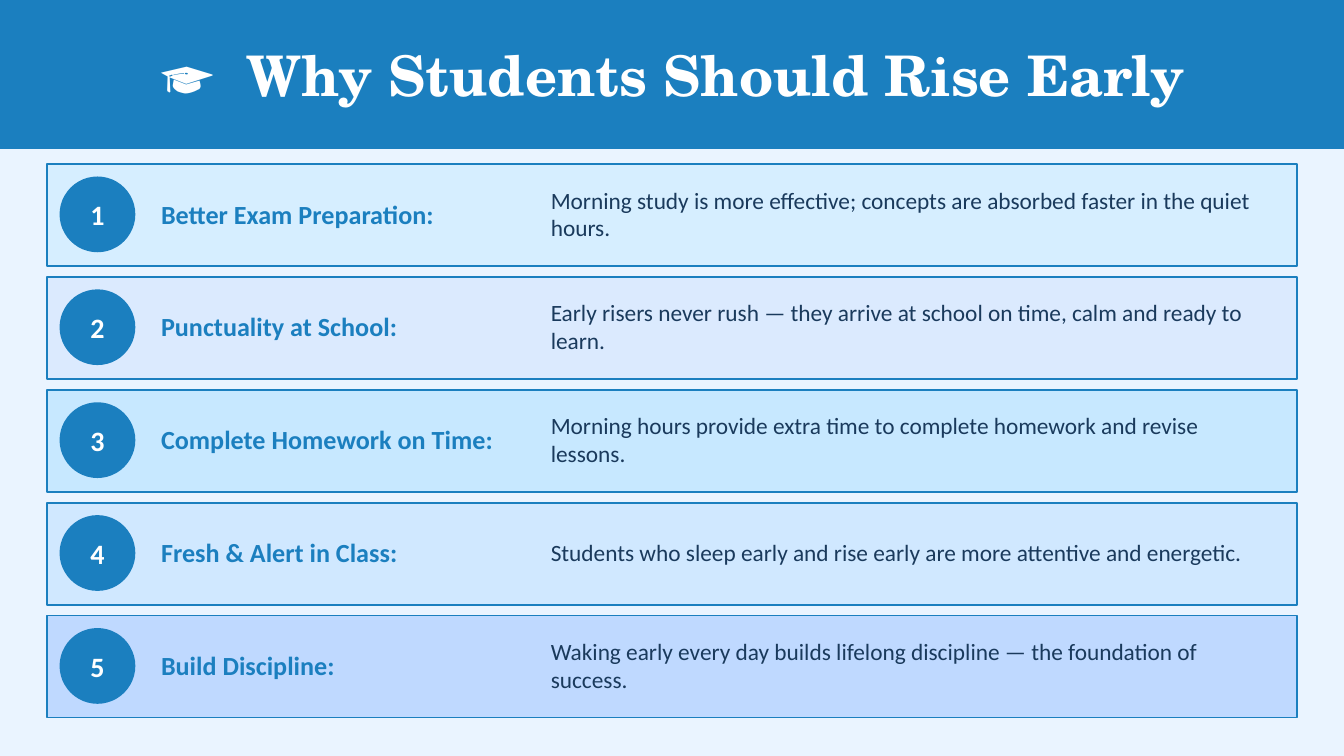
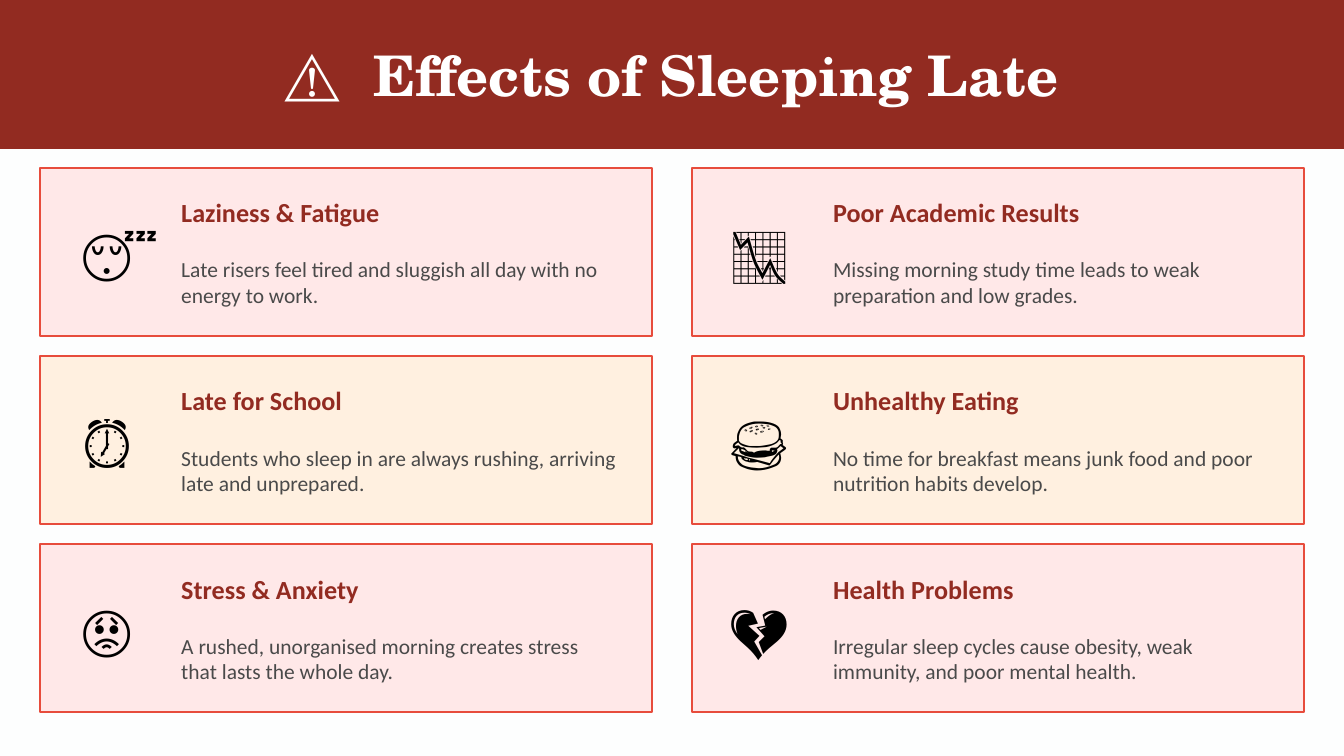
from dataclasses import dataclass

from pptx import Presentation
from pptx.dml.color import RGBColor
from pptx.enum.shapes import MSO_SHAPE as Preset
from pptx.enum.text import MSO_ANCHOR as Anchor, MSO_AUTO_SIZE as AutoSize, PP_ALIGN as Align
from pptx.shapes.autoshape import Shape
from pptx.presentation import Presentation as Deck
from pptx.slide import Slide
from pptx.util import Inches, Pt

TITLE_ONLY = 5
WHITE = "FFFFFF"
BLUE = "1B7FBF"
NAVY = "1A3A5C"
DARK_RED = "922B21"
RED = "E74C3C"
GREY = "4A4A4A"
BLACK = "000000"
PINK = "FFE8E8"
CREAM = "FFF0E0"


@dataclass(frozen=True)
class Style:
    size: float
    color: str
    bold: bool = False
    align: Align = Align.LEFT
    font: str = "Calibri"


@dataclass(frozen=True)
class Box:
    left: float
    top: float
    width: float
    height: float

    def inside(self, left: float, top: float, width: float, height: float) -> "Box":
        """A box placed relative to this one's top left corner."""
        return Box(self.left + left, self.top + top, width, height)

    def lengths(self) -> list[Inches]:
        return [Inches(v) for v in (self.left, self.top, self.width, self.height)]


@dataclass(frozen=True)
class Reason:
    heading: str
    detail: str
    fill: str


@dataclass(frozen=True)
class Effect:
    icon: str
    heading: str
    detail: str


TITLE = Style(30, WHITE, True, Align.CENTER, "TeX Gyre Schola")
NUMBER = Style(15, WHITE, True, Align.CENTER)
REASON_HEADING = Style(14, BLUE, True)
REASON_DETAIL = Style(12.5, NAVY)
ICON = Style(30, BLACK, align=Align.CENTER)
EFFECT_HEADING = Style(14, DARK_RED, True)
EFFECT_DETAIL = Style(11.5, GREY)

REASONS = [
    Reason("Better Exam Preparation:",
           "Morning study is more effective; concepts are absorbed faster in the quiet hours.",
           "D6EEFF"),
    Reason("Punctuality at School:",
           "Early risers never rush — they arrive at school on time, calm and ready to learn.",
           "DBEAFE"),
    Reason("Complete Homework on Time:",
           "Morning hours provide extra time to complete homework and revise lessons.",
           "C7E8FF"),
    Reason("Fresh & Alert in Class:",
           "Students who sleep early and rise early are more attentive and energetic.",
           "D0E8FF"),
    Reason("Build Discipline:",
           "Waking early every day builds lifelong discipline — the foundation of success.",
           "BFD9FF"),
]

EFFECTS = [
    Effect("😴", "Laziness & Fatigue",
           "Late risers feel tired and sluggish all day with no energy to work."),
    Effect("📉", "Poor Academic Results",
           "Missing morning study time leads to weak preparation and low grades."),
    Effect("⏰", "Late for School",
           "Students who sleep in are always rushing, arriving late and unprepared."),
    Effect("🍔", "Unhealthy Eating",
           "No time for breakfast means junk food and poor nutrition habits develop."),
    Effect("😟", "Stress & Anxiety",
           "A rushed, unorganised morning creates stress that lasts the whole day."),
    Effect("💔", "Health Problems",
           "Irregular sleep cycles cause obesity, weak immunity, and poor mental health."),
]


def rgb(color: str) -> RGBColor:
    return RGBColor.from_string(color)


def write(shape: Shape, text: str, style: Style) -> None:
    """Fill a shape with one formatted, vertically centred paragraph."""
    frame = shape.text_frame
    frame_format = {"word_wrap": True, "auto_size": AutoSize.NONE,
                    "vertical_anchor": Anchor.MIDDLE}
    for name, value in frame_format.items():
        setattr(frame, name, value)
    para = frame.paragraphs[0]
    para.alignment = style.align
    span = para.add_run()
    span.text = text
    span_format = {"name": style.font, "size": Pt(style.size), "bold": style.bold}
    for name, value in span_format.items():
        setattr(span.font, name, value)
    span.font.color.rgb = rgb(style.color)


def add_text(page: Slide, box: Box, text: str, style: Style) -> None:
    write(page.shapes.add_textbox(*box.lengths()), text, style)


def add_panel(page: Slide, box: Box, fill: str, line: str,
              preset: Preset = Preset.RECTANGLE) -> Shape:
    panel = page.shapes.add_shape(preset, *box.lengths())
    panel.shadow.inherit = False
    panel.fill.solid()
    panel.fill.fore_color.rgb = rgb(fill)
    panel.line.color.rgb = rgb(line)
    panel.line.width = Pt(1)
    return panel


def add_page(deck: Deck, title: str, background: str, band_color: str) -> Slide:
    """Add a slide with a coloured title band."""
    page = deck.slides.add_slide(deck.slide_layouts[TITLE_ONLY])
    page.background.fill.solid()
    page.background.fill.fore_color.rgb = rgb(background)
    heading = page.shapes.title
    title_box = Box(0.3, 0.1, 9.4, 0.9)
    for name, value in zip(("left", "top", "width", "height"), title_box.lengths()):
        setattr(heading, name, value)
    write(heading, title, TITLE)
    band = add_panel(page, Box(0, 0, 10, 1.1), band_color, band_color)
    heading.element.addprevious(band.element)  # keep the band behind the title
    return page


def add_reason(page: Slide, index: int, reason: Reason) -> None:
    row = Box(0.35, 1.22 + 0.84 * index, 9.3, 0.76)
    add_panel(page, row, reason.fill, BLUE)
    badge = add_panel(page, row.inside(0.1, 0.1, 0.55, 0.55), BLUE, BLUE, Preset.OVAL)
    write(badge, str(index + 1), NUMBER)
    add_text(page, row.inside(0.75, 0.12, 2.9, 0.5), reason.heading, REASON_HEADING)
    add_text(page, row.inside(3.65, 0.12, 5.5, 0.5), reason.detail, REASON_DETAIL)


def add_effect(page: Slide, index: int, effect: Effect) -> None:
    row, column = divmod(index, 2)
    card = Box(0.3 + 4.85 * column, 1.25 + 1.4 * row, 4.55, 1.25)
    add_panel(page, card, CREAM if row % 2 else PINK, RED)
    add_text(page, card.inside(0.1, 0.1, 0.8, 1.05), effect.icon, ICON)
    add_text(page, card.inside(0.95, 0.12, 3.45, 0.42), effect.heading, EFFECT_HEADING)
    add_text(page, card.inside(0.95, 0.55, 3.45, 0.6), effect.detail, EFFECT_DETAIL)


def main() -> None:
    deck = Presentation()
    deck.slide_width = Inches(10)
    deck.slide_height = Inches(10 * 9 / 16)

    reasons_page = add_page(deck, "🎓  Why Students Should Rise Early", "EAF4FF", BLUE)
    for index, reason in enumerate(REASONS):
        add_reason(reasons_page, index, reason)

    effects_page = add_page(deck, "⚠️  Effects of Sleeping Late", "FDFEFE", DARK_RED)
    for index, effect in enumerate(EFFECTS):
        add_effect(effects_page, index, effect)

    deck.save("out.pptx")


if __name__ == "__main__":
    main()
